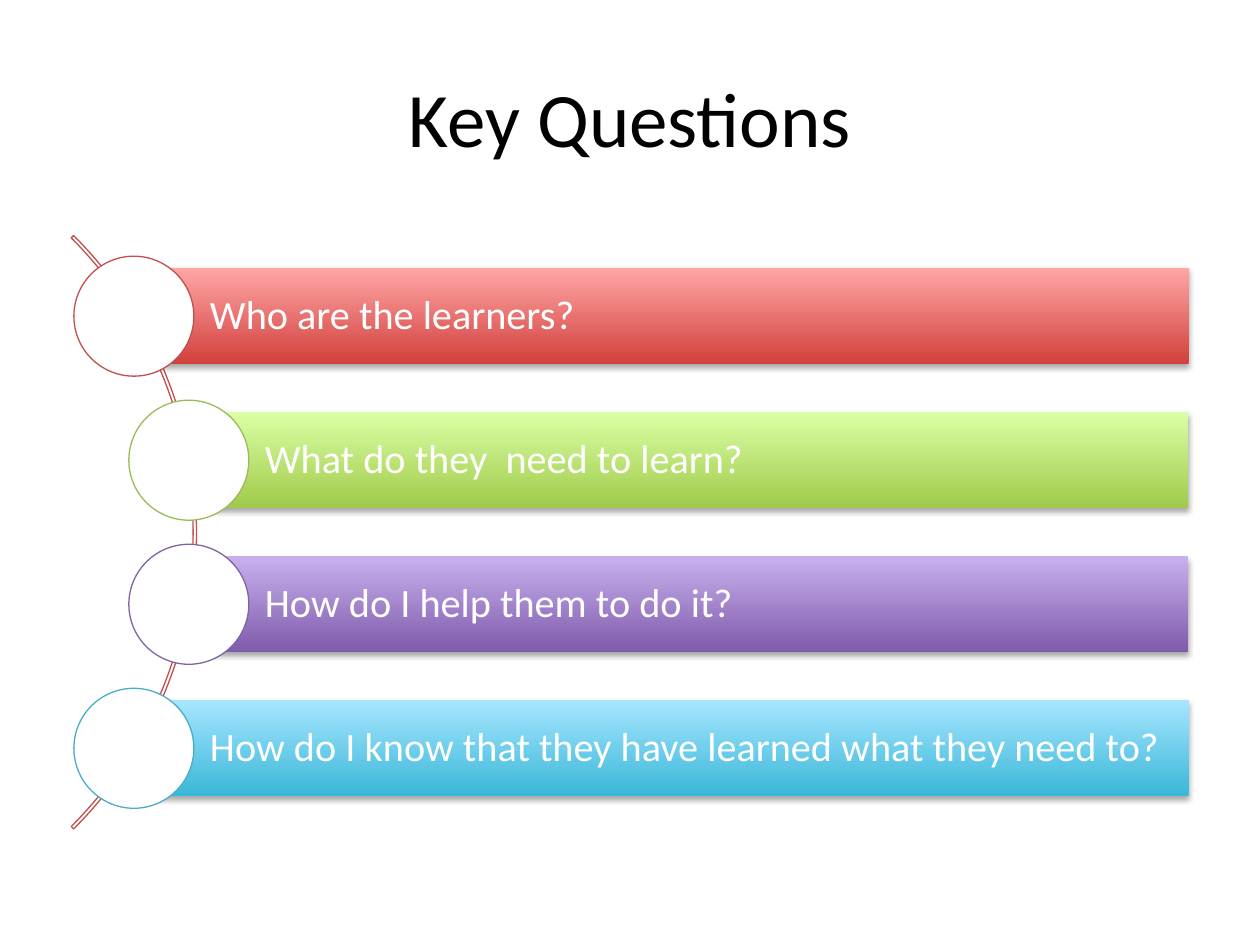
from dataclasses import dataclass

from lxml import etree
from pptx import Presentation
from pptx.dml.color import RGBColor
from pptx.enum.shapes import MSO_SHAPE
from pptx.enum.text import MSO_ANCHOR, PP_ALIGN
from pptx.oxml.ns import qn
from pptx.shapes.autoshape import Shape
from pptx.slide import Slide
from pptx.util import Pt

ARC = MSO_SHAPE.BLOCK_ARC
CIRCLE = MSO_SHAPE.OVAL
RECTANGLE = MSO_SHAPE.RECTANGLE
MIDDLE = MSO_ANCHOR.MIDDLE
CENTER = PP_ALIGN.CENTER
LEFT = PP_ALIGN.LEFT

FONT = "Calibri"
FIRST_CENTER = 180.7
PITCH = 82.3
BAR_HEIGHT = 54.86
BAR_RIGHT = 679.2
OUTER_LEFT = 76.5
INNER_LEFT = 107.9
CIRCLE_SIZE = 68.58
ARC_SIZE = 479.5
ARC_LEFT = -367.2


@dataclass(frozen=True)
class Question:
    text: str
    left: float
    dark: str
    light: str
    outline: str


QUESTIONS = [
    Question("Who are the learners?", OUTER_LEFT, "D1403C", "FFA6A5", "C0504D"),
    Question("What do they  need to learn?", INNER_LEFT, "A0CA4A", "DAFFA5", "9BBB59"),
    Question("How do I help them to do it?", INNER_LEFT, "7F5BAB", "C8B0ED", "8064A2"),
    Question("How do I know that they have learned what they need to?",
             OUTER_LEFT, "39B7D8", "A7E6FF", "4BACC6"),
]


def color(value: str) -> RGBColor:
    return RGBColor.from_string(value)


def write(box: Shape, text: str, *, size: float, fill: str, align: PP_ALIGN,
          spacing: float = 1.0) -> None:
    frame = box.text_frame
    frame.word_wrap = True
    frame.vertical_anchor = MIDDLE
    para = frame.paragraphs[0]
    para.alignment = align
    para.line_spacing = spacing
    span = para.add_run()
    span.text = text
    span.font.name = FONT
    span.font.size = Pt(size)
    span.font.color.rgb = color(fill)


def add_outlined(page: Slide, kind: MSO_SHAPE, left: float, top: float,
                 size: float, outline: str) -> Shape:
    shape = page.shapes.add_shape(kind, Pt(left), Pt(top), Pt(size), Pt(size))
    shape.shadow.inherit = False
    shape.line.color.rgb = color(outline)
    shape.line.width = Pt(0.75)
    return shape


def add_shadow(shape: Shape) -> None:
    shape.shadow.inherit = False
    effects = shape._element.spPr.find(qn("a:effectLst"))
    shadow = etree.SubElement(effects, qn("a:outerShdw"), blurRad=str(Pt(3.1)),
                              dist=str(Pt(1.8)), dir="5400000", rotWithShape="0")
    tone = etree.SubElement(shadow, qn("a:srgbClr"), val="000000")
    etree.SubElement(tone, qn("a:alpha"), val="35000")


def add_arc(page: Slide) -> None:
    middle = FIRST_CENTER + PITCH * (len(QUESTIONS) - 1) / 2
    arc = add_outlined(page, ARC, ARC_LEFT, middle - ARC_SIZE / 2, ARC_SIZE, "C0504D")
    arc.fill.background()
    for index, value in enumerate((189, 27, 0.004)):
        arc.adjustments[index] = value


def add_question(page: Slide, question: Question, center: float) -> None:
    bar = page.shapes.add_shape(
        RECTANGLE, Pt(question.left), Pt(center - BAR_HEIGHT / 2),
        Pt(BAR_RIGHT - question.left), Pt(BAR_HEIGHT))
    bar.line.fill.background()
    bar.fill.gradient()
    bar.fill.gradient_angle = 90
    for stop, value in zip(bar.fill.gradient_stops, (question.dark, question.light)):
        stop.color.rgb = color(value)
    add_shadow(bar)
    frame = bar.text_frame
    frame.margin_left = Pt(43.5)
    frame.margin_top = frame.margin_right = frame.margin_bottom = Pt(4.6)
    write(bar, question.text, size=23, fill="FFFFFF", align=LEFT, spacing=0.9)

    circle = add_outlined(page, CIRCLE, question.left - CIRCLE_SIZE / 2,
                          center - CIRCLE_SIZE / 2, CIRCLE_SIZE, question.outline)
    circle.fill.solid()
    circle.fill.fore_color.rgb = color("FFFFFF")


def main() -> None:
    deck = Presentation()
    deck.slide_width, deck.slide_height = Pt(720), Pt(540)
    page = deck.slides.add_slide(deck.slide_layouts[5])
    title = page.shapes.title
    title.left, title.top, title.width, title.height = Pt(36), Pt(21.6), Pt(648), Pt(90)
    write(title, "Key Questions", size=44, fill="000000", align=CENTER)
    add_arc(page)
    for index, question in enumerate(QUESTIONS):
        add_question(page, question, FIRST_CENTER + index * PITCH)
    deck.save("out.pptx")


if __name__ == "__main__":
    main()
